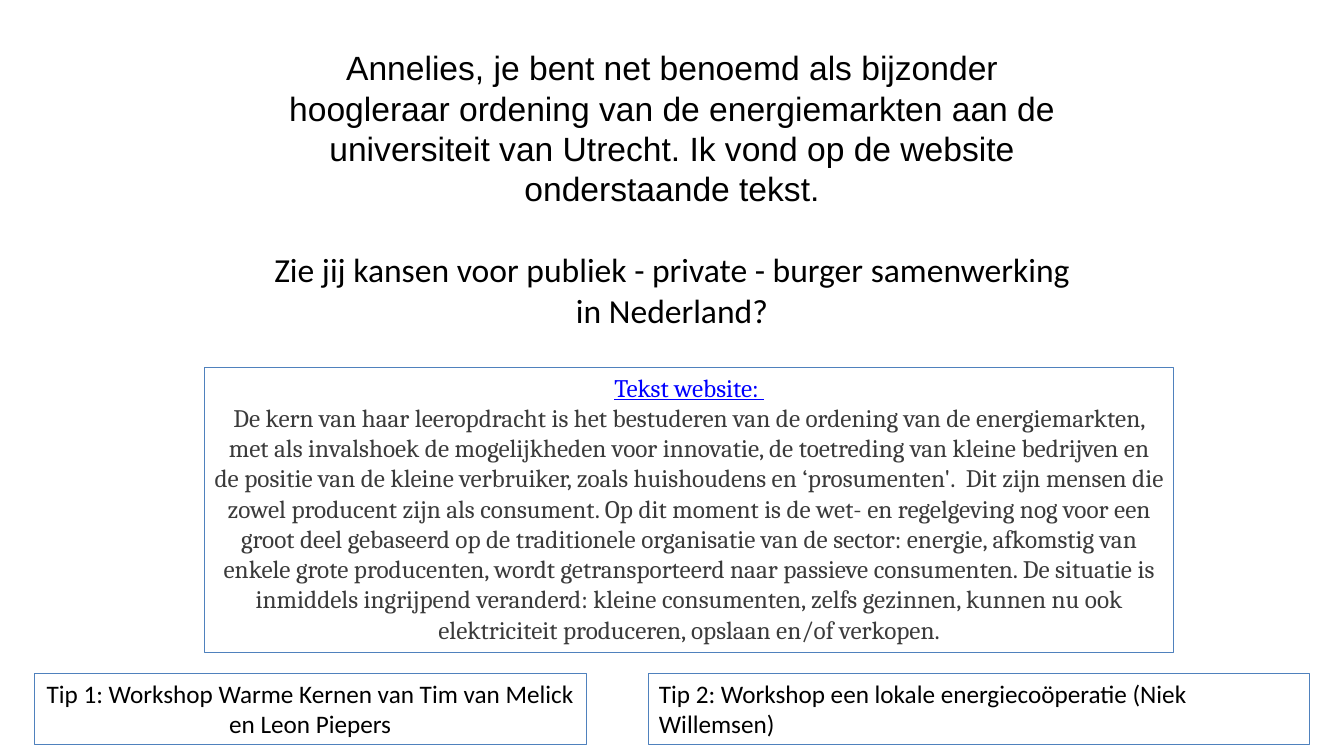
from dataclasses import dataclass

from pptx import Presentation
from pptx.dml.color import RGBColor
from pptx.enum.shapes import MSO_SHAPE
from pptx.enum.text import MSO_ANCHOR, MSO_AUTO_SIZE, PP_ALIGN
from pptx.util import Cm, Pt

RECTANGLE = MSO_SHAPE.RECTANGLE
TOP = MSO_ANCHOR.TOP
GROW = MSO_AUTO_SIZE.SHAPE_TO_FIT_TEXT
LEFT, CENTER = PP_ALIGN.LEFT, PP_ALIGN.CENTER


@dataclass(frozen=True)
class Theme:
    black: RGBColor = RGBColor(0x00, 0x00, 0x00)
    grey: RGBColor = RGBColor(0x3B, 0x3B, 0x3B)
    link: RGBColor = RGBColor(0x00, 0x00, 0xFF)
    border: RGBColor = RGBColor(0x4F, 0x81, 0xBD)
    border_width: Pt = Pt(0.75)
    question_size: Pt = Pt(24)
    body_size: Pt = Pt(18)
    question_gap: Pt = Pt(29)
    intro_font: str = "Arial"
    main_font: str = "Calibri"
    quote_font: str = "Cambria"


THEME = Theme()

INTRO = (
    "Annelies, je bent net benoemd als bijzonder hoogleraar ordening van de "
    "energiemarkten aan de universiteit van Utrecht. Ik vond op de website "
    "onderstaande tekst."
)
QUESTION = "Zie jij kansen voor publiek - private - burger samenwerking in Nederland?"
QUOTE_HEADING = "Tekst website: "
QUOTE = (
    "De kern van haar leeropdracht is het bestuderen van de ordening van de "
    "energiemarkten, met als invalshoek de mogelijkheden voor innovatie, de "
    "toetreding van kleine bedrijven en de positie van de kleine verbruiker, "
    "zoals huishoudens en ‘prosumenten'.  Dit zijn mensen die zowel producent "
    "zijn als consument. Op dit moment is de wet- en regelgeving nog voor een "
    "groot deel gebaseerd op de traditionele organisatie van de sector: energie, "
    "afkomstig van enkele grote producenten, wordt getransporteerd naar passieve "
    "consumenten. De situatie is inmiddels ingrijpend veranderd: kleine "
    "consumenten, zelfs gezinnen, kunnen nu ook elektriciteit produceren, opslaan "
    "en/of verkopen."
)
TIPS = (
    ("Tip 1: Workshop Warme Kernen van Tim van Melick en Leon Piepers",
     0.86, 13.92, CENTER),
    ("Tip 2: Workshop een lokale energiecoöperatie (Niek Willemsen)",
     16.36, 16.66, LEFT),
)


def prepare_frame(shape):
    """Wrap the text from the top and return the text frame."""
    frame = shape.text_frame
    frame.word_wrap = True
    frame.auto_size = GROW
    frame.vertical_anchor = TOP
    return frame


def add_text_box(slide, left, top, width, height):
    return prepare_frame(
        slide.shapes.add_textbox(Cm(left), Cm(top), Cm(width), Cm(height)))


def add_outlined_box(slide, left, top, width, height):
    shape = slide.shapes.add_shape(
        RECTANGLE, Cm(left), Cm(top), Cm(width), Cm(height))
    shape.shadow.inherit = False
    shape.fill.background()
    shape.line.color.rgb = THEME.border
    shape.line.width = THEME.border_width
    return prepare_frame(shape)


def write(frame, text, *, font=THEME.main_font, size=THEME.body_size,
          color=THEME.black, align=CENTER, underline=False, space_before=None):
    """Fill the first paragraph if it is free, otherwise append one."""
    first = frame.paragraphs[0]
    paragraph = frame.add_paragraph() if first.runs else first
    paragraph.alignment = align
    if space_before is not None:
        paragraph.space_before = space_before
    run = paragraph.add_run()
    run.text = text
    run.font.name = font
    run.font.size = size
    run.font.color.rgb = color
    run.font.underline = underline


def add_question(slide):
    frame = add_text_box(slide, 6.4, 1.07, 21.08, 7.44)
    write(frame, INTRO, font=THEME.intro_font, size=THEME.question_size)
    write(frame, QUESTION, size=THEME.question_size,
          space_before=THEME.question_gap)


def add_quote(slide):
    frame = add_outlined_box(slide, 5.16, 9.25, 24.43, 7.19)
    write(frame, QUOTE_HEADING, font=THEME.quote_font, color=THEME.link,
          underline=True)
    write(frame, QUOTE, font=THEME.quote_font, color=THEME.grey)


def add_tips(slide):
    for text, left, width, align in TIPS:
        frame = add_outlined_box(slide, left, 16.97, width, 1.8)
        write(frame, text, align=align)


def main():
    presentation = Presentation()
    presentation.slide_width = Cm(33.88)
    presentation.slide_height = Cm(19.05)
    slide = presentation.slides.add_slide(presentation.slide_layouts[6])
    add_quote(slide)
    add_tips(slide)
    add_question(slide)
    presentation.save("out.pptx")


if __name__ == "__main__":
    main()
